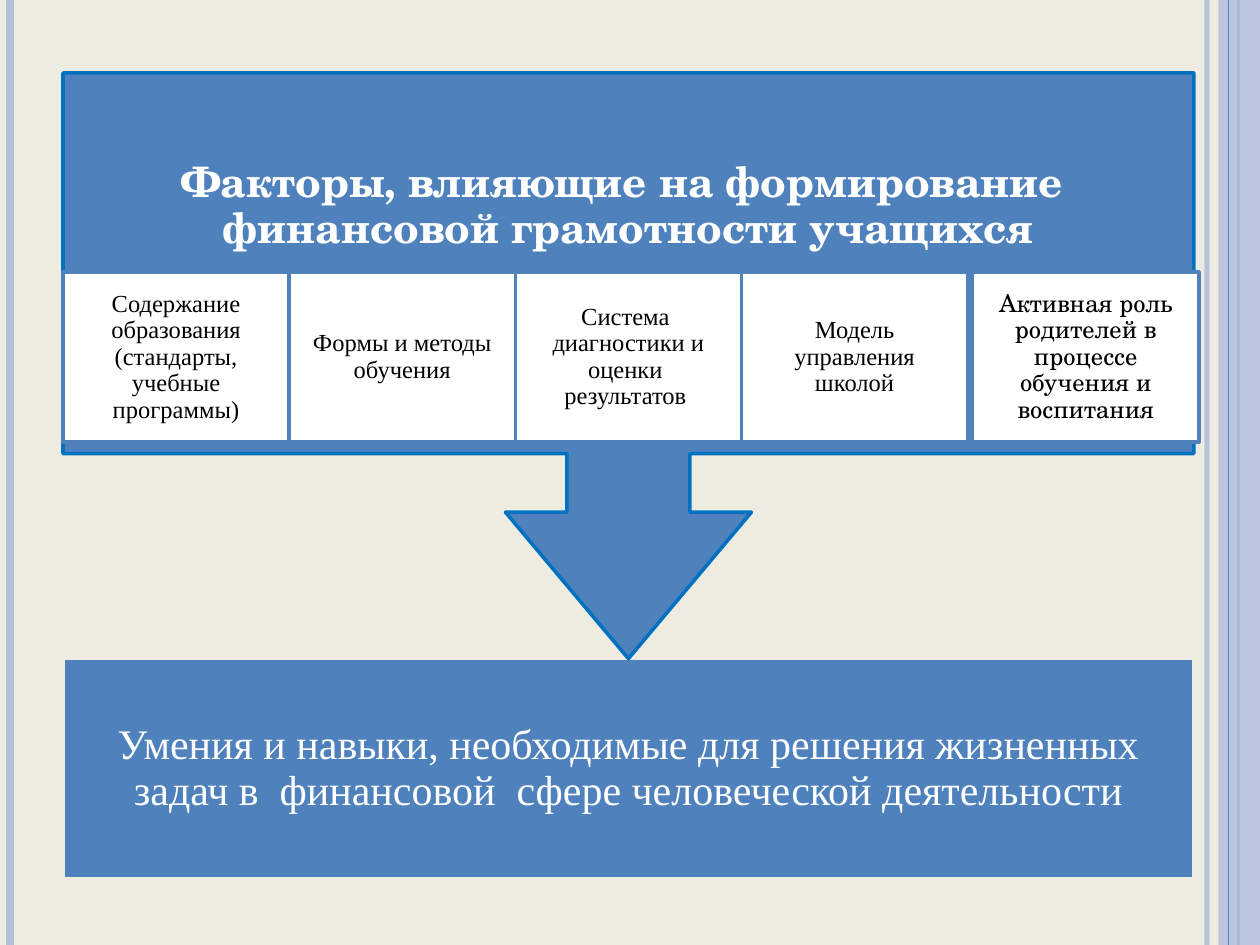
from lxml.etree import SubElement
from pptx import Presentation
from pptx.dml.color import RGBColor
from pptx.enum.shapes import MSO_CONNECTOR, MSO_SHAPE
from pptx.enum.text import MSO_ANCHOR, MSO_AUTO_SIZE, PP_ALIGN
from pptx.oxml.ns import qn
from pptx.util import Inches, Pt

HUES = {"back": "EEECE1", "pale": "B3C1DB", "blue": "4F81BD",
        "edge": "0070C0", "white": "FFFFFF", "black": "000000"}
RGB = {name: RGBColor.from_string(code) for name, code in HUES.items()}
ROMAN, SCHOOL = "Times New Roman", "TeX Gyre Schola"

deck = Presentation()
deck.slide_width, deck.slide_height = Inches(10), Inches(7.5)
COL, ROW = deck.slide_width / 100, deck.slide_height / 100
slide = deck.slides.add_slide(deck.slide_layouts[5])
slide.background.fill.solid()
slide.background.fill.fore_color.rgb = RGB["back"]


def draw(kind, x, y, wide, high, fill, edge=None):
    box = slide.shapes.add_shape(kind, int(x * COL), int(y * ROW), int(wide * COL), int(high * ROW))
    box.shadow.inherit = False
    box.fill.solid()
    box.fill.fore_color.rgb = RGB[fill]
    if edge:
        box.line.color.rgb = RGB[edge]
        box.line.width = Pt(2)
    else:
        box.line.fill.background()
    return box


def write(box, text, size, face, hue, pad=(0, 0), bold=False):
    frame = box.text_frame
    frame.text = text
    side, end = (Inches(gap) for gap in pad)
    form = {"word_wrap": True, "auto_size": MSO_AUTO_SIZE.NONE,
            "vertical_anchor": MSO_ANCHOR.MIDDLE, "margin_left": side,
            "margin_right": side, "margin_top": end, "margin_bottom": end}
    para = frame.paragraphs[0]
    lay = {"alignment": PP_ALIGN.CENTER, "line_spacing": 0.9}
    font = {"size": Pt(size), "name": face, "bold": bold}
    for part, look in ((frame, form), (para, lay), (para.runs[0].font, font)):
        for key, value in look.items():
            setattr(part, key, value)
    para.runs[0].font.color.rgb = RGB[hue]


for x, hue, width, alpha in (
    (95.8, "pale", 3, 93),
    (0.8, "pale", 4.5, 100),
    (98.3, "blue", 1.5, 100),
    (97.5, "blue", 0.75, 100),
):
    if x == 97.5:
        band = draw(MSO_SHAPE.RECTANGLE, 96.7, 0, 3.3, 100, "pale")
        tint = band.fill._xPr.find(".//" + qn("a:srgbClr"))
        SubElement(tint, qn("a:alpha"), val="87000")
    rule = slide.shapes.add_connector(
        MSO_CONNECTOR.STRAIGHT, int(x * COL), 0, int(x * COL), deck.slide_height)
    rule.line.color.rgb = RGB[hue]
    rule.line.width = Pt(width)
    prop = rule.element.spPr
    SubElement(prop, qn("a:effectLst"))
    if alpha < 100:
        SubElement(prop.find(".//" + qn("a:srgbClr")), qn("a:alpha"), val=str(alpha * 1000))

LEFT, WIDE = 5, 89.75
goal = draw(MSO_SHAPE.RECTANGLE, LEFT, 69.65, WIDE, 23.4, "blue", "back")
write(goal, "Умения и навыки, необходимые для решения жизненных задач в  финансовой  сфере человеческой деятельности",
      24, ROMAN, "white", (0.23, 0.23))

arrow = draw(MSO_SHAPE.DOWN_ARROW_CALLOUT, LEFT, 7.7, WIDE, 62, "blue", "edge")
for spot, share in enumerate((0.21, 0.21, 0.25, 0.65)):
    arrow.adjustments[spot] = share

title = slide.shapes.title
place = {"left": int((LEFT + 2.3) * COL), "top": int(10.8 * ROW),
         "width": int((WIDE - 4.6) * COL), "height": int(22.2 * ROW)}
for key, value in place.items():
    setattr(title, key, value)
write(title, "Факторы, влияющие на формирование  финансовой грамотности учащихся",
      24, SCHOOL, "white", bold=True)
arrow.element.addnext(title.element)

STEP = WIDE / 5
for spot, (text, face, nudge) in enumerate((
    ("Содержание образования (стандарты, учебные программы)", ROMAN, 0),
    ("Формы и методы обучения", ROMAN, 0),
    ("Система  диагностики и оценки  результатов ", ROMAN, 0),
    ("Модель управления школой", ROMAN, 0),
    ("Активная роль родителей в процессе обучения и воспитания", SCHOOL, 0.4),
)):
    cell = draw(MSO_SHAPE.RECTANGLE, LEFT + spot * STEP + nudge, 28.8, STEP, 18, "white", "blue")
    write(cell, text, 14, face, "black", (0.11, 0.02))

deck.save("out.pptx")
